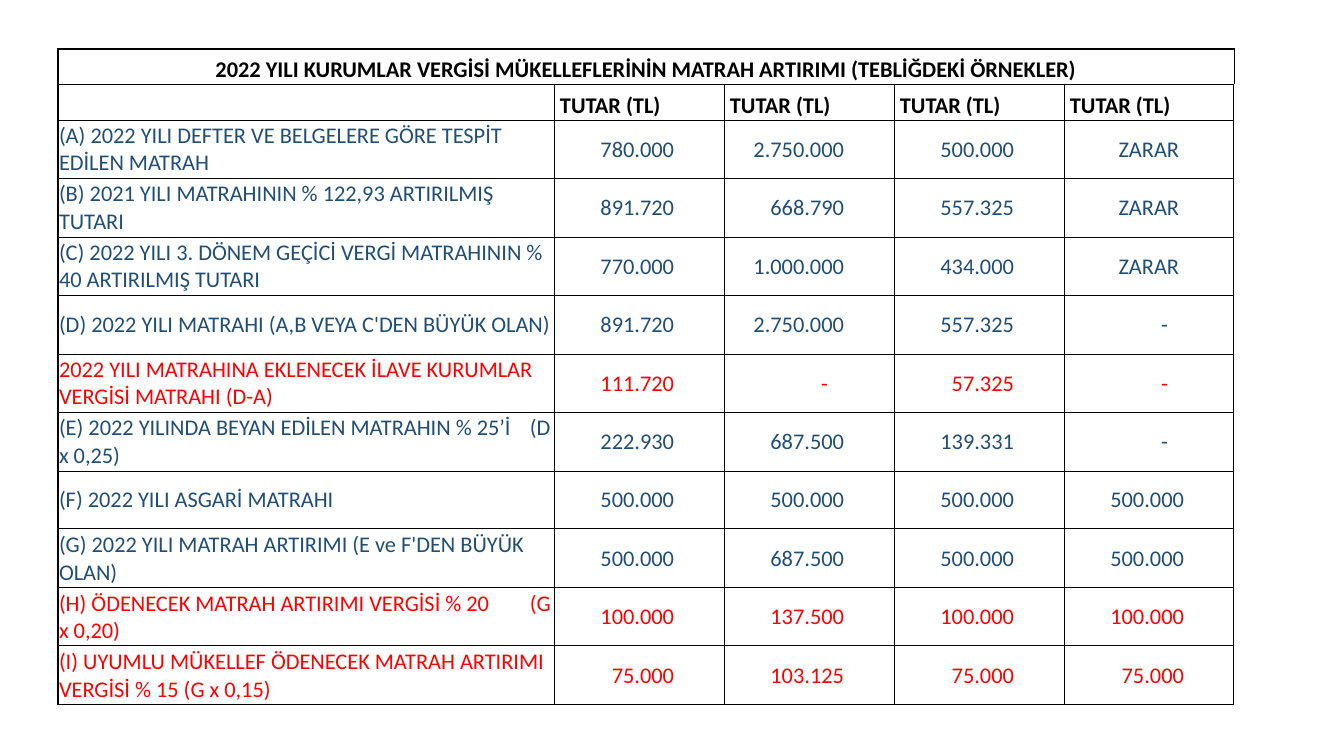
"""Builds the slide with the 2022 corporate tax base increase table."""
import lxml.etree
import pptx
import pptx.dml.color
import pptx.enum.text
import pptx.oxml.ns
import pptx.util

HEADING = "2022 YILI KURUMLAR VERGİSİ MÜKELLEFLERİNİN MATRAH ARTIRIMI (TEBLİĞDEKİ ÖRNEKLER)"
AMOUNT_HEADING = "TUTAR (TL)"
LINES = [
    ("blue", "(A) 2022 YILI DEFTER VE BELGELERE GÖRE TESPİT EDİLEN MATRAH",
     "780.000", "2.750.000", "500.000", "ZARAR"),
    ("blue", "(B) 2021 YILI MATRAHININ % 122,93 ARTIRILMIŞ TUTARI",
     "891.720", "668.790", "557.325", "ZARAR"),
    ("blue", "(C) 2022 YILI 3. DÖNEM GEÇİCİ VERGİ MATRAHININ % 40 ARTIRILMIŞ TUTARI",
     "770.000", "1.000.000", "434.000", "ZARAR"),
    ("blue", "(D) 2022 YILI MATRAHI (A,B VEYA C'DEN BÜYÜK OLAN)",
     "891.720", "2.750.000", "557.325", "-"),
    ("red", "2022 YILI MATRAHINA EKLENECEK İLAVE KURUMLAR VERGİSİ MATRAHI (D-A)",
     "111.720", "-", "57.325", "-"),
    ("blue", "(E) 2022 YILINDA BEYAN EDİLEN MATRAHIN % 25’İ\t(D x 0,25)",
     "222.930", "687.500", "139.331", "-"),
    ("blue", "(F) 2022 YILI ASGARİ MATRAHI",
     "500.000", "500.000", "500.000", "500.000"),
    ("blue", "(G) 2022 YILI MATRAH ARTIRIMI (E ve F'DEN BÜYÜK OLAN)",
     "500.000", "687.500", "500.000", "500.000"),
    ("red", "(H) ÖDENECEK MATRAH ARTIRIMI VERGİSİ % 20\t(G x 0,20)",
     "100.000", "137.500", "100.000", "100.000"),
    ("red", "(I) UYUMLU MÜKELLEF ÖDENECEK MATRAH ARTIRIMI VERGİSİ % 15 (G x 0,15)",
     "75.000", "103.125", "75.000", "75.000"),
]
COLORS = {"black": "000000", "white": "FFFFFF", "blue": "1F4E78", "red": "FF0000"}
COLUMN_WIDTHS = [496] + [170] * 4
ROW_HEIGHTS = [35, 36] + [58, 59] * 5
FORMULA_TAB = 471
ALIGN = pptx.enum.text.PP_ALIGN
ANCHOR = pptx.enum.text.MSO_ANCHOR


def px(length):
    return round(length * 914400 / 100.8)


def color(name):
    return pptx.dml.color.RGBColor.from_string(COLORS[name])


def add_element(parent, tag, **attributes):
    element = lxml.etree.SubElement(parent, pptx.oxml.ns.qn(tag))
    for key, value in attributes.items():
        element.set(key, str(value))
    return element


def write(cell, text, ink="black", bold=False, align=ALIGN.LEFT,
          anchor=ANCHOR.MIDDLE, left=1, right=1):
    cell.vertical_anchor = anchor
    cell.margin_left, cell.margin_right = px(left), px(right)
    cell.margin_top, cell.margin_bottom = px(1), 0
    paragraph = cell.text_frame.paragraphs[0]
    paragraph.text = text
    paragraph.alignment = align
    if "\t" in text:
        stops = add_element(paragraph._p.get_or_add_pPr(), "a:tabLst")
        add_element(stops, "a:tab", pos=px(FORMULA_TAB), algn="l")
    for font in [paragraph.font] + [run.font for run in paragraph.runs]:
        font.name, font.size, font.bold = "Calibri", pptx.util.Pt(16), bold
        font.color.rgb = color(ink)


def frame(cell, row, column):
    cell.fill.solid()
    cell.fill.fore_color.rgb = color("white")
    outer = {"L": column == 0, "R": column == len(COLUMN_WIDTHS) - 1,
             "T": row == 0, "B": row == len(ROW_HEIGHTS) - 1}
    properties = cell._tc.get_or_add_tcPr()
    for position, (side, on_edge) in enumerate(outer.items()):
        weight = pptx.util.Pt(1 if on_edge else 0.5)
        line = add_element(properties, f"a:ln{side}", w=int(weight))
        ink = add_element(line, "a:solidFill")
        add_element(ink, "a:srgbClr", val=COLORS["black"])
        properties.insert(position, line)


def write_amount(cell, amount, ink):
    if amount == "ZARAR":
        write(cell, amount, ink=ink, align=ALIGN.CENTER)
    else:
        write(cell, amount, ink=ink, align=ALIGN.RIGHT, right=66 if amount == "-" else 50)


def main():
    deck = pptx.Presentation()
    deck.slide_width, deck.slide_height = px(1344), px(756)
    slide = deck.slides.add_slide(deck.slide_layouts[6])
    table = slide.shapes.add_table(
        len(ROW_HEIGHTS), len(COLUMN_WIDTHS), px(58), px(49),
        px(sum(COLUMN_WIDTHS)), px(sum(ROW_HEIGHTS))).table
    table.first_row = table.horz_banding = False
    for column, width in zip(table.columns, COLUMN_WIDTHS):
        column.width = px(width)
    for row, height in zip(table.rows, ROW_HEIGHTS):
        row.height = px(height)
    for row in range(len(ROW_HEIGHTS)):
        for column in range(len(COLUMN_WIDTHS)):
            frame(table.cell(row, column), row, column)

    table.cell(0, 0).merge(table.cell(0, len(COLUMN_WIDTHS) - 1))
    write(table.cell(0, 0), HEADING, bold=True, align=ALIGN.CENTER, anchor=ANCHOR.BOTTOM)
    write(table.cell(1, 0), "")
    for column in range(1, len(COLUMN_WIDTHS)):
        write(table.cell(1, column), AMOUNT_HEADING, bold=True, anchor=ANCHOR.BOTTOM, left=6)
    for row, (ink, label, *amounts) in enumerate(LINES, start=2):
        write(table.cell(row, 0), label, ink=ink)
        for column, amount in enumerate(amounts, start=1):
            write_amount(table.cell(row, column), amount, ink)
    deck.save("out.pptx")


if __name__ == "__main__":
    main()
